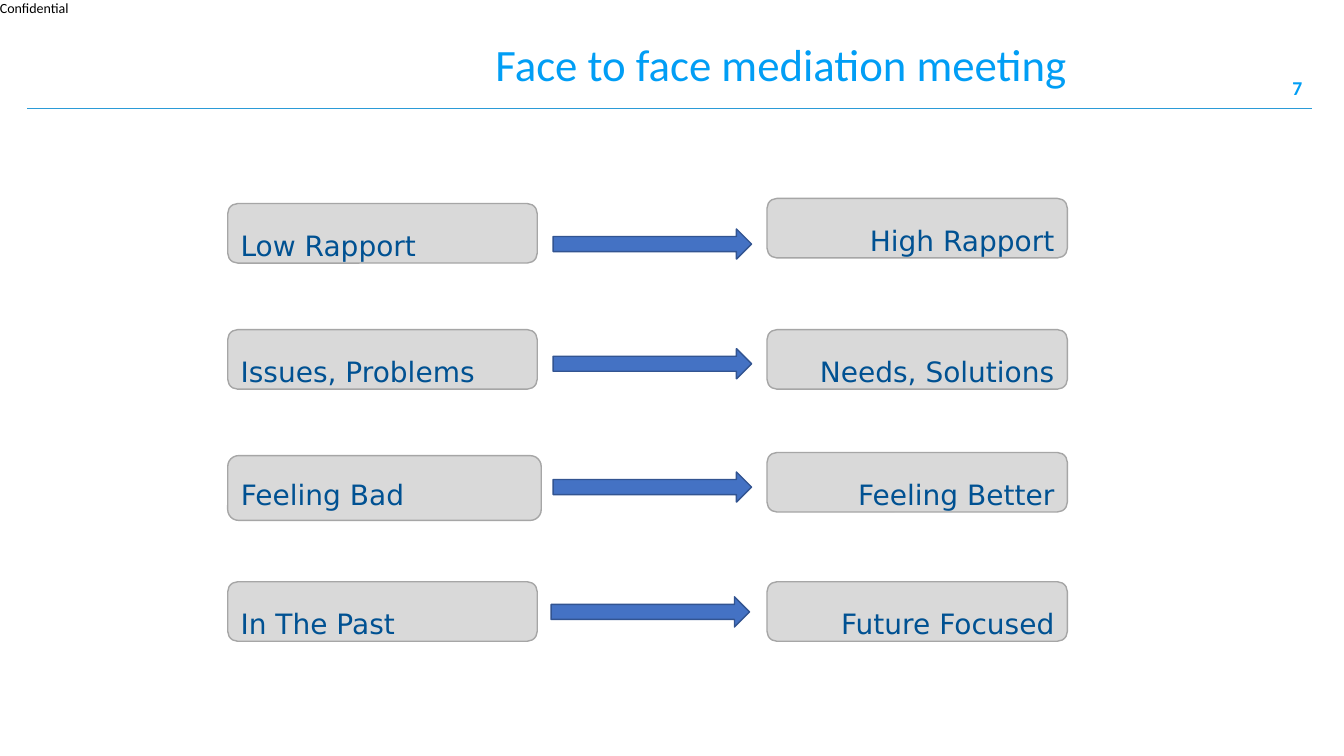
from dataclasses import dataclass

from lxml.etree import SubElement
from pptx import Presentation
from pptx.dml.color import RGBColor
from pptx.enum.shapes import MSO_CONNECTOR as Connector, MSO_SHAPE as Shape
from pptx.enum.text import MSO_ANCHOR as Anchor, PP_ALIGN as Align
from pptx.oxml.ns import qn
from pptx.util import Cm, Pt


@dataclass(frozen=True)
class Theme:
    heading_font: str = "Calibri"
    label_font: str = "DejaVu Sans"
    accent: str = "019EF5"
    rule: str = "2B9BD7"
    ink: str = "000000"
    label: str = "005192"
    card: str = "D9D9D9"
    card_edge: str = "A6A6A6"
    arrow: str = "4472C4"
    arrow_edge: str = "325491"
    title_size: int = 32
    label_size: int = 20
    number_size: int = 14
    marking_size: int = 10


THEME = Theme()


def color(value):
    return RGBColor.from_string(value)


def write(shape, text, size, tint, font, align=Align.LEFT, spacing=1.0,
          bold=False, **frame_format):
    frame = shape.text_frame
    settings = {"word_wrap": True, "vertical_anchor": Anchor.TOP, **frame_format}
    for name, value in settings.items():
        setattr(frame, name, value)
    para = frame.paragraphs[0]
    para.alignment, para.line_spacing = align, spacing
    span = para.add_run()
    span.text = text
    for name, value in {"name": font, "size": Pt(size), "bold": bold}.items():
        setattr(span.font, name, value)
    span.font.color.rgb = color(tint)


def add_text(page, box, *text, **text_format):
    shape = page.shapes.add_textbox(*map(Cm, box))
    write(shape, *text, **text_format)


def add_block(page, kind, box, fill, edge):
    shape = page.shapes.add_shape(kind, *map(Cm, box))
    shape.shadow.inherit = False
    shape.fill.solid()
    shape.fill.fore_color.rgb = color(fill)
    shape.line.color.rgb = color(edge)
    shape.line.width = Pt(1)
    return shape


def add_header(page, box):
    left, top, width, height = box
    right, bottom = left + width, top + height

    # Rule under the header
    rule = page.shapes.add_connector(
        Connector.STRAIGHT, Cm(left + 0.69), Cm(bottom), Cm(right - 0.8), Cm(bottom))
    rule.line.color.rgb = color(THEME.rule)
    rule.line.width = Pt(0.5)
    SubElement(rule.element.spPr, qn("a:effectLst"))

    # Marking, page number and title
    no_margins = {f"margin_{side}": 0 for side in ("left", "top", "right", "bottom")}
    add_text(page, (left, top, 1.83, 0.43), "Confidential", THEME.marking_size,
             THEME.ink, THEME.heading_font, **{**no_margins, "word_wrap": False})
    add_text(page, (right - 8.42, bottom - 1.02, 7.62, 1.02), "7", THEME.number_size,
             THEME.accent, THEME.heading_font, align=Align.RIGHT, bold=True,
             vertical_anchor=Anchor.MIDDLE)
    add_text(page, (left + 7.09, top + 1.02, 25.2, 3.68),
             "Face to face mediation meeting", THEME.title_size, THEME.accent,
             THEME.heading_font, align=Align.CENTER, spacing=0.85)


def add_card(page, box, text, align, spacing):
    card = add_block(page, Shape.ROUNDED_RECTANGLE, box, THEME.card, THEME.card_edge)
    write(card, text, THEME.label_size, THEME.label, THEME.label_font,
          align=align, spacing=spacing)


def add_shift(page, box, before, after, rise=0, arrow_drop=0.48, arrow_shift=0,
              growth=(0, 0), spacing=1.5):
    """One row: a starting state, an arrow and the state it leads to."""
    left, top, width, height = box
    side = 7.57
    add_card(page, (left, top, 7.8 + growth[0], height + growth[1]),
             before, Align.LEFT, spacing)
    add_card(page, (left + width - side, top - rise, side, height),
             after, Align.RIGHT, 1.5)
    add_block(page, Shape.RIGHT_ARROW,
              (left + 8.2 + arrow_shift, top + arrow_drop, 5, 0.76),
              THEME.arrow, THEME.arrow_edge)


def add_shifts(page, box):
    left, top, width, height = box
    rows = [
        ("Low Rapport", "High Rapport", {"rise": 0.13, "arrow_drop": 0.64}),
        ("Issues, Problems", "Needs, Solutions", {}),
        ("Feeling Bad", "Feeling Better",
         {"rise": 0.08, "arrow_drop": 0.41, "growth": (0.1, 0.13), "spacing": 1.4}),
        ("In The Past", "Future Focused", {"arrow_drop": 0.38, "arrow_shift": -0.05}),
    ]
    card_height = 1.5
    step = (height - card_height) / (len(rows) - 1)
    for index, (before, after, details) in enumerate(rows):
        add_shift(page, (left, top + index * step, width, card_height),
                  before, after, **details)


def main():
    deck = Presentation()
    deck.slide_width, deck.slide_height = Cm(33.87), Cm(19.05)
    page = deck.slides.add_slide(deck.slide_layouts[6])
    add_header(page, (0, 0, 33.87, 2.72))
    add_shifts(page, (5.74, 5.13, 21.16, 11.03))
    deck.save("out.pptx")


if __name__ == "__main__":
    main()
